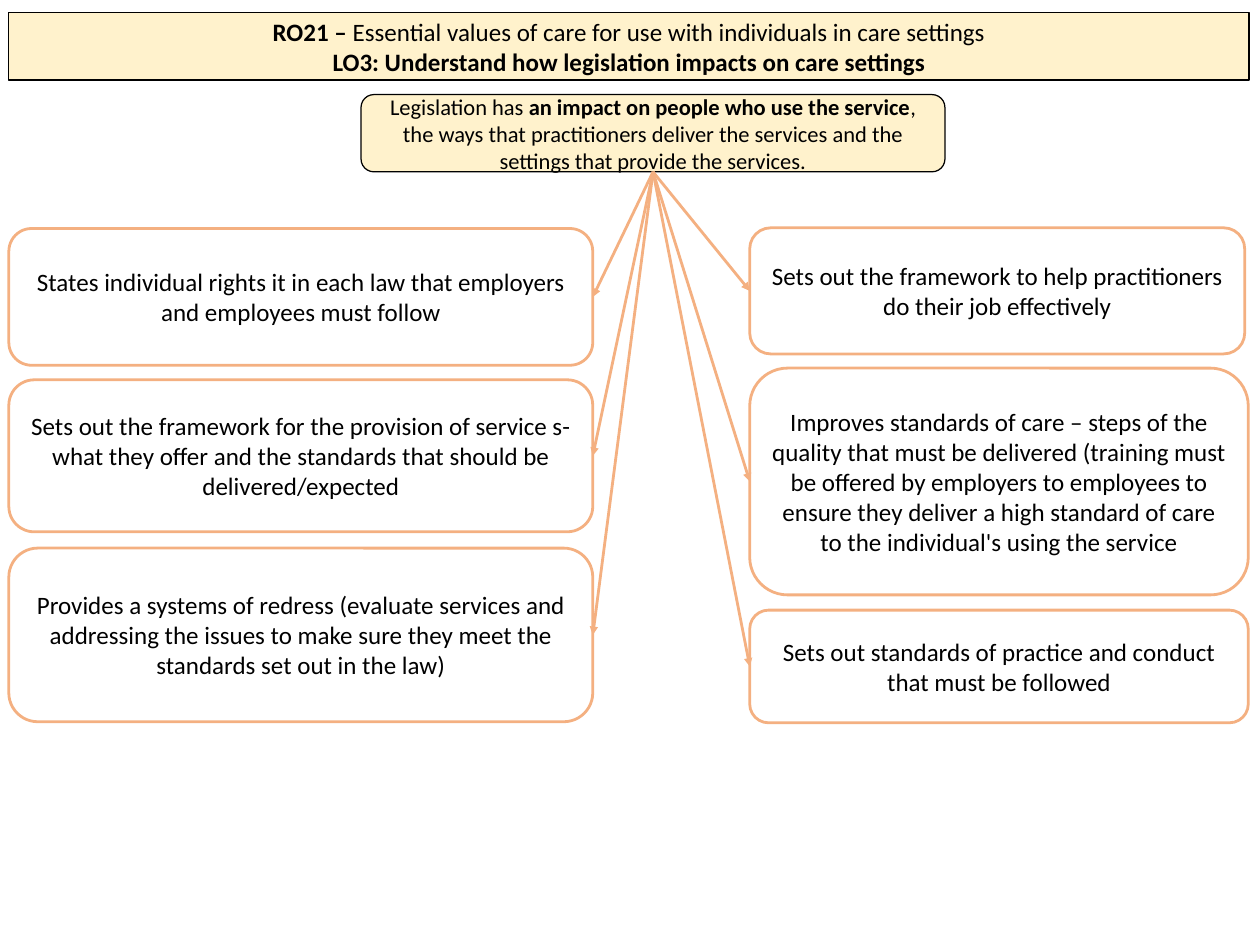
from dataclasses import dataclass

from lxml import etree
from pptx import Presentation
from pptx.dml.color import RGBColor
from pptx.enum.shapes import MSO_CONNECTOR, MSO_SHAPE
from pptx.enum.text import MSO_ANCHOR, MSO_AUTO_SIZE, PP_ALIGN
from pptx.oxml.ns import qn
from pptx.util import Cm, Pt


@dataclass(frozen=True)
class Theme:
    font: str = "Calibri"
    ink: RGBColor = RGBColor(0x00, 0x00, 0x00)
    cream: RGBColor = RGBColor(0xFF, 0xF2, 0xCC)
    white: RGBColor = RGBColor(0xFF, 0xFF, 0xFF)
    orange: RGBColor = RGBColor(0xF4, 0xB0, 0x81)
    text: Pt = Pt(20)
    hub_text: Pt = Pt(18)
    thin: Pt = Pt(1)
    thick: Pt = Pt(2.25)


theme = Theme()


def style_box(sp, fill, line, width):
    sp.shadow.inherit = False
    sp.fill.solid()
    sp.fill.fore_color.rgb = fill
    sp.line.color.rgb = line
    sp.line.width = width


def write(sp, paragraphs, size):
    """Fill a shape with paragraphs, each a list of (text, bold) runs."""
    tf = sp.text_frame
    tf.word_wrap = True
    tf.auto_size = MSO_AUTO_SIZE.NONE
    tf.vertical_anchor = MSO_ANCHOR.MIDDLE
    for i, runs in enumerate(paragraphs):
        p = tf.add_paragraph() if i else tf.paragraphs[0]
        p.alignment = PP_ALIGN.CENTER
        for text, bold in runs:
            r = p.add_run()
            r.text = text
            r.font.name = theme.font
            r.font.size = size
            r.font.bold = bold
            r.font.color.rgb = theme.ink


prs = Presentation()
prs.slide_width, prs.slide_height = Cm(35.56), Cm(26.67)
slide = prs.slides.add_slide(prs.slide_layouts[5])

# Title banner
title = slide.shapes.title
title.left, title.top, title.width, title.height = Cm(0.25), Cm(0.36), Cm(35), Cm(1.9)
style_box(title, theme.cream, theme.ink, theme.thin)
write(title, [
    [("RO21 – ", True),
     ("Essential values of care for use with individuals in care settings", False)],
    [("LO3: Understand how legislation impacts on care settings", True)],
], theme.text)

# Central statement
hub = slide.shapes.add_shape(MSO_SHAPE.ROUNDED_RECTANGLE,
                             Cm(10.19), Cm(2.67), Cm(16.48), Cm(2.18))
style_box(hub, theme.cream, theme.ink, theme.thin)
write(hub, [[
    ("Legislation has ", False),
    ("an impact on people who use the service", True),
    (", the ways that practitioners deliver the services and the settings "
     "that provide the services.", False),
]], theme.hub_text)

# Impact boxes: left, connection site facing the hub, (top, width, height, text)
LEFT_SITE, BOTTOM_SITE, RIGHT_SITE = 1, 2, 3
columns = [
    (0.25, RIGHT_SITE, [
        (6.45, 16.48, 3.86, "States individual rights it in each law that employers "
         "and employees must follow"),
        (10.72, 16.48, 4.29, "Sets out the framework for the provision of service s- "
         "what they offer and the standards that should be delivered/expected"),
        (15.47, 16.48, 4.9, "Provides a systems of redress (evaluate services and "
         "addressing the issues to make sure they meet the standards set out in the law)"),
    ]),
    (21.16, LEFT_SITE, [
        (6.43, 13.97, 3.56, "Sets out the framework to help practitioners do their job "
         "effectively"),
        (10.39, 14.07, 6.4, "Improves standards of care – steps of the quality that must "
         "be delivered (training must be offered by employers to employees to ensure "
         "they deliver a high standard of care to the individual's using the service"),
        (17.22, 14.07, 3.18, "Sets out standards of practice and conduct that must be "
         "followed"),
    ]),
]
targets = []
for left, site, boxes in columns:
    for top, width, height, text in boxes:
        sp = slide.shapes.add_shape(MSO_SHAPE.ROUNDED_RECTANGLE,
                                    Cm(left), Cm(top), Cm(width), Cm(height))
        style_box(sp, theme.white, theme.orange, theme.thick)
        write(sp, [[(text, False)]], theme.text)
        targets.append((sp, site))

# Arrows from the statement to each impact
for sp, site in targets:
    arrow = slide.shapes.add_connector(MSO_CONNECTOR.STRAIGHT, 0, 0, 0, 0)
    arrow.begin_connect(hub, BOTTOM_SITE)
    arrow.end_connect(sp, site)
    arrow.line.color.rgb = theme.orange
    arrow.line.width = theme.thick
    etree.SubElement(arrow.line._get_or_add_ln(), qn("a:tailEnd"), type="triangle")
    etree.SubElement(arrow._element.spPr, qn("a:effectLst"))

prs.save("out.pptx")
